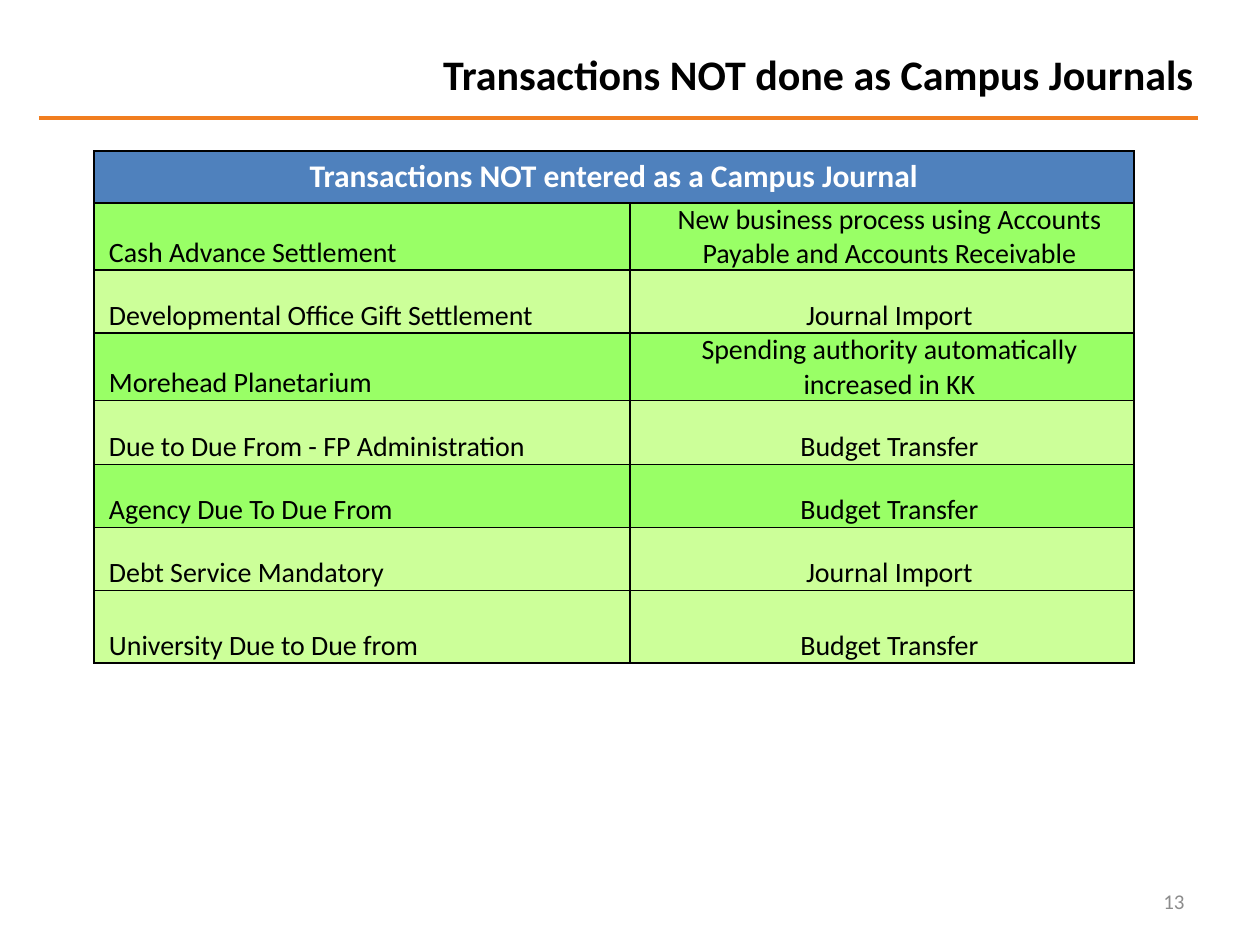
from dataclasses import dataclass

from lxml import etree
from pptx import Presentation
from pptx.dml.color import RGBColor
from pptx.enum.shapes import MSO_CONNECTOR
from pptx.enum.text import MSO_ANCHOR, PP_ALIGN
from pptx.oxml.ns import qn
from pptx.util import Pt

LEFT, CENTER, RIGHT = PP_ALIGN.LEFT, PP_ALIGN.CENTER, PP_ALIGN.RIGHT
TOP, MIDDLE, BOTTOM = MSO_ANCHOR.TOP, MSO_ANCHOR.MIDDLE, MSO_ANCHOR.BOTTOM
PX = 914400 // 126

TITLE = "Transactions NOT done as Campus Journals"
PAGE_NUMBER = "13"
HEADER = "Transactions NOT entered as a Campus Journal"
HEADER_HEIGHT = 52
COLUMN_WIDTHS = (536, 504)
INDENT = 15
# transaction, process used instead, row height in px, shade
ROWS = [
    ("Cash Advance Settlement",
     "New business process using Accounts Payable and Accounts Receivable", 59, "dark"),
    ("Developmental Office Gift Settlement", "Journal Import", 63, "light"),
    ("Morehead Planetarium",
     "Spending authority automatically increased in KK", 63, "dark"),
    ("Due to Due From - FP Administration", "Budget Transfer", 64, "light"),
    ("Agency Due To Due From", "Budget Transfer", 63, "dark"),
    ("Debt Service Mandatory", "Journal Import", 63, "light"),
    ("University Due to Due from", "Budget Transfer", 73, "light"),
]


@dataclass(frozen=True)
class Theme:
    font: str = "Calibri"
    black: str = "000000"
    white: str = "FFFFFF"
    gray: str = "8C8C8C"
    rule: str = "F17E1F"
    header: str = "4F81BD"
    dark: str = "99FF66"
    light: str = "CCFF99"
    title_size: int = 24
    header_size: int = 18
    body_size: int = 16
    number_size: int = 12


THEME = Theme()


def write(tf, text, size, color, align, bold=False):
    p = tf.paragraphs[0]
    p.alignment = align
    r = p.add_run()
    r.text = text
    r.font.name = THEME.font
    r.font.size = Pt(size)
    r.font.bold = bold
    r.font.color.rgb = RGBColor.from_string(color)
    return p


def add_text(slide, box, anchor, *style, **options):
    tf = slide.shapes.add_textbox(*(n * PX for n in box)).text_frame
    tf.word_wrap = True
    tf.vertical_anchor = anchor
    write(tf, *style, **options)


def add_rule(slide, x1, x2, y):
    line = slide.shapes.add_connector(
        MSO_CONNECTOR.STRAIGHT, x1 * PX, y * PX, x2 * PX, y * PX)
    line.line.color.rgb = RGBColor.from_string(THEME.rule)
    line.line.width = Pt(2)
    etree.SubElement(line._element.spPr, qn("a:effectLst"))


def style_cell(cell, fill):
    """Give a cell black 1 pt borders and a solid fill."""
    tc_pr = cell._tc.get_or_add_tcPr()
    for side in ("lnL", "lnR", "lnT", "lnB"):
        border = etree.SubElement(tc_pr, qn(f"a:{side}"), w=str(Pt(1)))
        solid = etree.SubElement(border, qn("a:solidFill"))
        etree.SubElement(solid, qn("a:srgbClr"), val=THEME.black)
    cell.fill.solid()
    cell.fill.fore_color.rgb = RGBColor.from_string(fill)


def fill_body_cell(cell, text, align, fill):
    style_cell(cell, fill)
    cell.vertical_anchor = BOTTOM
    cell.margin_left = cell.margin_right = cell.margin_top = cell.margin_bottom = 0
    p = write(cell.text_frame, text, THEME.body_size, THEME.black, align)
    p._p.get_or_add_pPr().set("marL", str(INDENT * PX))


def add_transactions(slide, x, y):
    heights = [HEADER_HEIGHT] + [row[2] for row in ROWS]
    table = slide.shapes.add_table(
        len(heights), len(COLUMN_WIDTHS), x * PX, y * PX,
        sum(COLUMN_WIDTHS) * PX, sum(heights) * PX).table
    for column, width in zip(table.columns, COLUMN_WIDTHS):
        column.width = width * PX
    for row, height in zip(table.rows, heights):
        row.height = height * PX

    header = table.cell(0, 0)
    header.merge(table.cell(0, 1))
    for column in range(len(COLUMN_WIDTHS)):
        style_cell(table.cell(0, column), THEME.header)
    write(header.text_frame, HEADER, THEME.header_size, THEME.white, CENTER, bold=True)

    for i, (transaction, process, _, shade) in enumerate(ROWS, start=1):
        fill = getattr(THEME, shade)
        fill_body_cell(table.cell(i, 0), transaction, LEFT, fill)
        fill_body_cell(table.cell(i, 1), process, CENTER, fill)


def main():
    prs = Presentation()
    prs.slide_width, prs.slide_height = 1260 * PX, 945 * PX
    slide = prs.slides.add_slide(prs.slide_layouts[6])
    add_rule(slide, 39, 1198, 118)
    add_text(slide, (903, 876, 294, 50), MIDDLE,
             PAGE_NUMBER, THEME.number_size, THEME.gray, RIGHT)
    add_transactions(slide, 94, 151)
    add_text(slide, (262, 42, 944, 73), TOP,
             TITLE, THEME.title_size, THEME.black, RIGHT, bold=True)
    prs.save("out.pptx")


if __name__ == "__main__":
    main()
